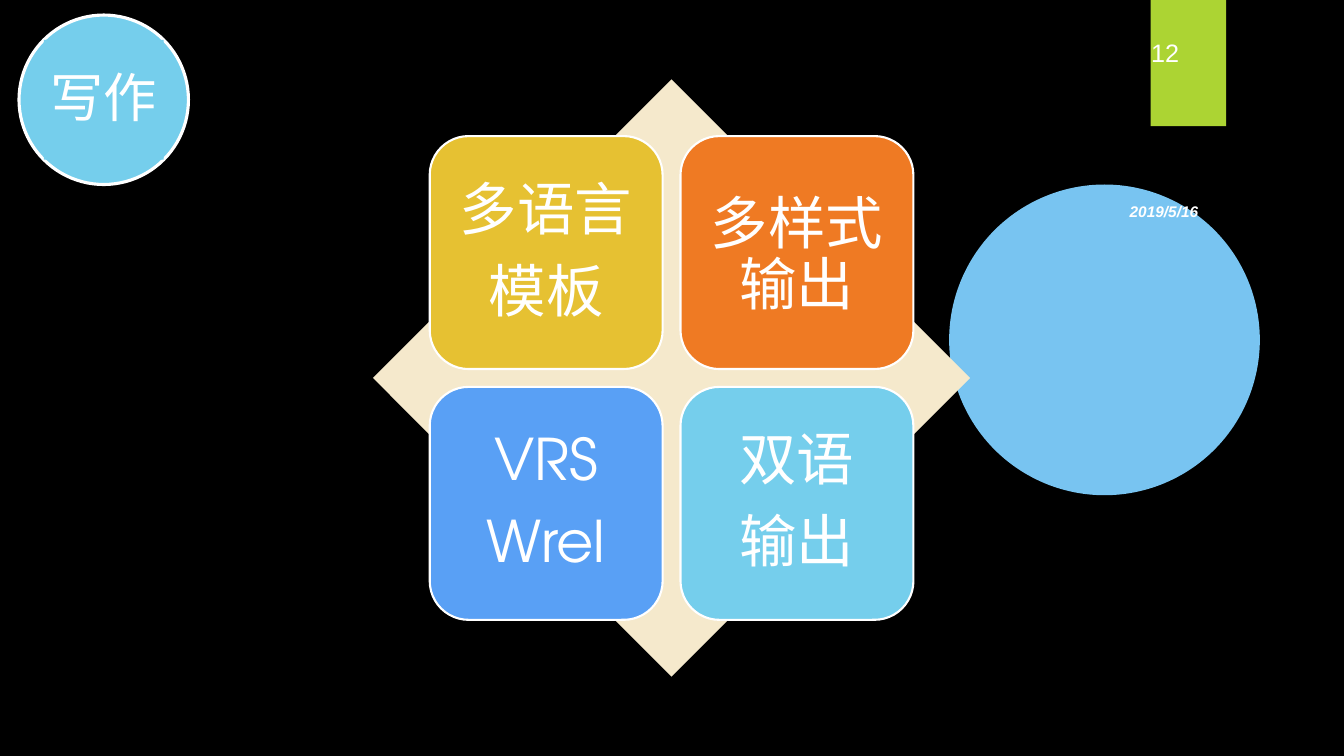
from pptx import Presentation
from pptx.dml.color import RGBColor
from pptx.enum.shapes import MSO_SHAPE
from pptx.enum.text import MSO_ANCHOR, MSO_AUTO_SIZE, PP_ALIGN
from pptx.oxml.ns import qn
from pptx.util import Cm, Pt
from lxml.etree import SubElement

BLACK = RGBColor(0x00, 0x00, 0x00)
WHITE = RGBColor(0xFF, 0xFF, 0xFF)
PALE_BLUE = RGBColor(0x78, 0xC4, 0xF1)
GREEN = RGBColor(0xAC, 0xD4, 0x33)
SKY = RGBColor(0x75, 0xCE, 0xEC)
CREAM = RGBColor(0xF5, 0xE9, 0xCC)
YELLOW = RGBColor(0xE6, 0xC1, 0x32)
ORANGE = RGBColor(0xEF, 0x7A, 0x23)
BLUE = RGBColor(0x59, 0xA0, 0xF5)

CHINESE_FONT = "Noto Sans CJK SC"
LATIN_FONT = "TeX Gyre Adventor"
SMALL_FONT = "Arial"
LINE_SPACING = 0.9

# Colour, font, paragraphs, first line spacing and space after, row by row
TILES = [
    (YELLOW, CHINESE_FONT, ["多语言", "模板"], LINE_SPACING, 14.35),
    (ORANGE, CHINESE_FONT, ["多样式", "输出"], 1.0, 0),
    (BLUE, LATIN_FONT, ["VRS", "Wrel"], LINE_SPACING, 14.35),
    (SKY, CHINESE_FONT, ["双语", "输出"], LINE_SPACING, 14.35),
]


def add_filled_shape(slide, kind, box, fill, line_width=None):
    shape = slide.shapes.add_shape(kind, *(Cm(length) for length in box))
    shape.shadow.inherit = False
    shape.fill.solid()
    shape.fill.fore_color.rgb = fill
    if line_width:
        shape.line.color.rgb = WHITE
        shape.line.width = Pt(line_width)
    else:
        shape.line.fill.background()
    return shape


def add_run(paragraph, text, size, font_name):
    run = paragraph.add_run()
    run.text = text
    run.font.size = Pt(size)
    run.font.name = font_name
    run.font.color.rgb = WHITE
    SubElement(run.font._element, qn("a:ea")).set("typeface", font_name)
    return run


def set_frame(text_frame, inset):
    text_frame.word_wrap = True
    text_frame.auto_size = MSO_AUTO_SIZE.NONE
    text_frame.vertical_anchor = MSO_ANCHOR.MIDDLE
    text_frame.margin_left = text_frame.margin_right = Cm(inset)
    text_frame.margin_top = text_frame.margin_bottom = Cm(inset)


def add_label(slide, box, text, size):
    label = slide.shapes.add_textbox(*(Cm(length) for length in box))
    label.text_frame.word_wrap = True
    return add_run(label.text_frame.paragraphs[0], text, size, SMALL_FONT)


def add_decoration(slide, left, top):
    # Large disc and page tab with the date and the page number
    add_filled_shape(slide, MSO_SHAPE.OVAL, (left, top + 4.65, 7.83, 7.83), PALE_BLUE)
    add_filled_shape(slide, MSO_SHAPE.RECTANGLE, (left + 5.08, top, 1.9, 3.18), GREEN)
    date = add_label(slide, (left + 4.3, top + 4.98, 2.74, 0.84), "2019/5/16", 11)
    date.font.bold = True
    date.font.italic = True
    add_label(slide, (left + 4.84, top + 0.81, 2.34, 2.13), "12", 18)


def add_title_badge(slide, left, top, diameter):
    # Round badge with the title in its inner square
    add_filled_shape(slide, MSO_SHAPE.OVAL, (left, top, diameter, diameter), SKY, 2.25)
    title = slide.shapes.title
    side = 3.02
    margin = (diameter - side) / 2
    title.left, title.top = Cm(left + margin), Cm(top + margin)
    title.width = title.height = Cm(side)
    title.fill.solid()
    title.fill.fore_color.rgb = SKY
    set_frame(title.text_frame, 0.13)
    paragraph = title.text_frame.paragraphs[0]
    paragraph.alignment = PP_ALIGN.CENTER
    paragraph.line_spacing = LINE_SPACING
    add_run(paragraph, "写作", 38, CHINESE_FONT)
    # Bring the title in front of the badge
    slide.shapes._spTree.append(title._element)


def add_matrix(slide, left, top, size):
    # Diamond with a two by two grid of tiles in its middle
    add_filled_shape(slide, MSO_SHAPE.DIAMOND, (left, top, size, size), CREAM)
    tile_size, gap = 5.87, 0.45
    pitch = tile_size + gap
    margin = (size - tile_size - pitch) / 2
    for index, (fill, font_name, lines, first_spacing, space_after) in enumerate(TILES):
        row, column = divmod(index, 2)
        box = (left + margin + column * pitch, top + margin + row * pitch,
               tile_size, tile_size)
        tile = add_filled_shape(slide, MSO_SHAPE.ROUNDED_RECTANGLE, box, fill, 1.5)
        tile.adjustments[0] = 0.167
        text_frame = tile.text_frame
        set_frame(text_frame, 0.43)
        for number, text in enumerate(lines):
            paragraph = text_frame.add_paragraph() if number else text_frame.paragraphs[0]
            paragraph.alignment = PP_ALIGN.CENTER
            paragraph.line_spacing = LINE_SPACING if number else first_spacing
            paragraph.space_after = Pt(space_after)
            add_run(paragraph, text, 41, font_name)


def main():
    presentation = Presentation()
    presentation.slide_width = Cm(33.87)
    presentation.slide_height = Cm(19.05)
    slide = presentation.slides.add_slide(presentation.slide_layouts[5])
    slide.background.fill.solid()
    slide.background.fill.fore_color.rgb = BLACK
    add_decoration(slide, 23.92, 0)
    add_title_badge(slide, 0.48, 0.38, 4.27)
    add_matrix(slide, 9.4, 2, 15.05)
    presentation.save("out.pptx")


if __name__ == "__main__":
    main()
